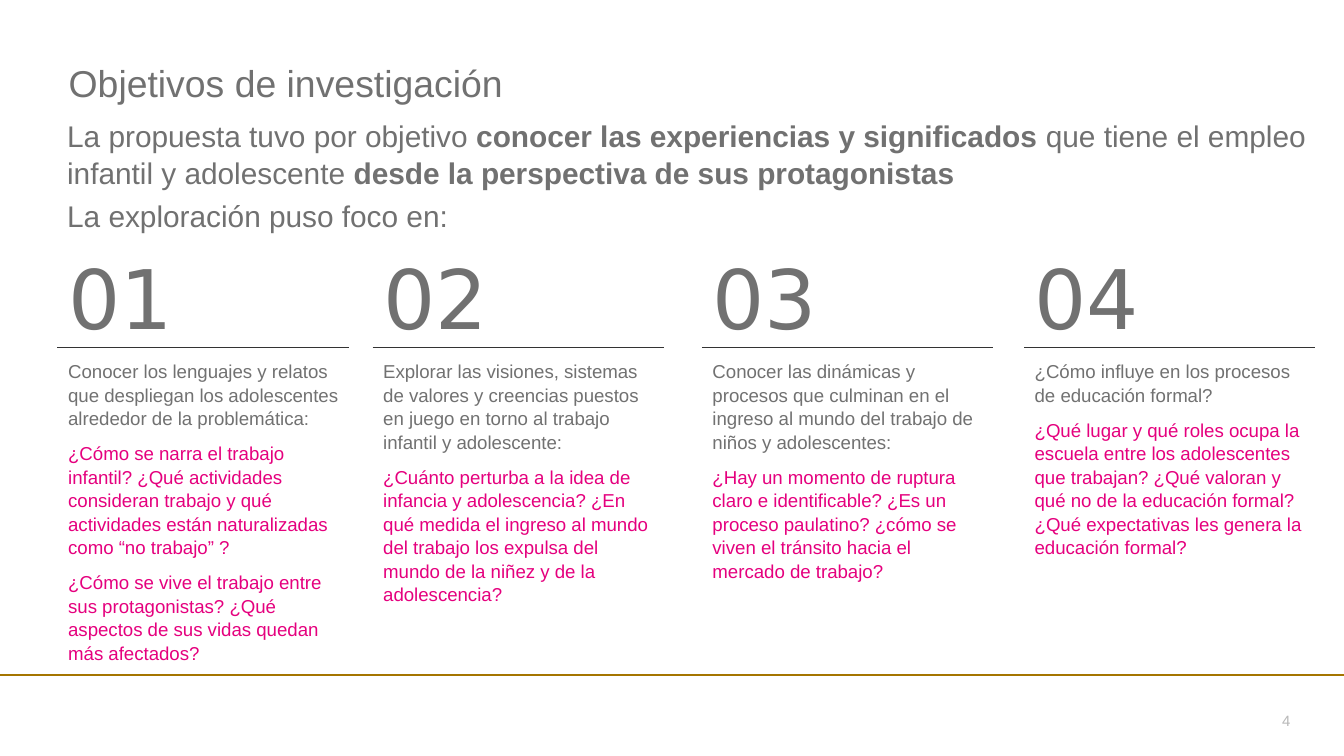
from lxml import etree
from pptx import Presentation
from pptx.dml.color import RGBColor
from pptx.enum.shapes import MSO_CONNECTOR
from pptx.enum.text import MSO_ANCHOR, MSO_AUTO_SIZE, PP_ALIGN
from pptx.oxml.ns import qn
from pptx.util import Pt

STRAIGHT = MSO_CONNECTOR.STRAIGHT
TOP, BOTTOM = MSO_ANCHOR.TOP, MSO_ANCHOR.BOTTOM
NO_FIT = MSO_AUTO_SIZE.NONE
LEFT, RIGHT = PP_ALIGN.LEFT, PP_ALIGN.RIGHT

GREY = RGBColor(0x71, 0x71, 0x71)
PINK = RGBColor(0xE5, 0x00, 0x7E)
DARK = RGBColor(0x33, 0x33, 0x33)
PALE = RGBColor(0xB8, 0xB8, 0xB8)
GOLD = RGBColor(0xA5, 0x75, 0x00)

WIDTH, HEIGHT = 720, 405
COLUMN_WIDTH = 156
RULE_TOP = 186.4

# Left edge, topic and questions of each column
COLUMNS = [
    (30.8,
     "Conocer los lenguajes y relatos que despliegan los adolescentes "
     "alrededor de la problemática:",
     ["¿Cómo se narra el trabajo infantil? ¿Qué actividades consideran trabajo "
      "y qué actividades están naturalizadas como “no trabajo” ?",
      "¿Cómo se vive el trabajo entre sus protagonistas? ¿Qué aspectos de sus "
      "vidas quedan más afectados?"]),
    (199.6,
     "Explorar las visiones, sistemas de valores y creencias puestos en juego "
     "en torno al trabajo infantil y adolescente:",
     ["¿Cuánto perturba a la idea de infancia y adolescencia? ¿En qué medida el "
      "ingreso al mundo del trabajo los expulsa del mundo de la niñez y de la "
      "adolescencia?"]),
    (376,
     "Conocer las dinámicas y procesos que culminan en el ingreso al mundo del "
     "trabajo de niños y adolescentes:",
     ["¿Hay un momento de ruptura claro e identificable? ¿Es un proceso "
      "paulatino? ¿cómo se viven el tránsito hacia el mercado de trabajo?"]),
    (548.6,
     "¿Cómo influye en los procesos de educación formal?",
     ["¿Qué lugar y qué roles ocupa la escuela entre los adolescentes que "
      "trabajan? ¿Qué valoran y qué no de la educación formal? ¿Qué expectativas "
      "les genera la educación formal?"]),
]


class SlideBuilder:
    """Holds the text style and the current slide."""

    font = "Arial"
    line_spacing = 1.05

    def __init__(self, page):
        self.page = page

    def fill_text(self, shape, paragraphs, size, font=None, align=LEFT, anchor=TOP,
                  insets=(0, 0, 0, 0), before=0, after=0):
        """Fill a shape; each paragraph is a list of (text, colour, bold)."""
        frame = shape.text_frame
        frame.word_wrap = True
        frame.auto_size = NO_FIT
        frame.vertical_anchor = anchor
        (frame.margin_left, frame.margin_top,
         frame.margin_right, frame.margin_bottom) = map(Pt, insets)
        for index, spans in enumerate(paragraphs):
            para = frame.add_paragraph() if index else frame.paragraphs[0]
            para.alignment = align
            para.line_spacing = self.line_spacing
            para.space_before = Pt(before if index else 0)
            para.space_after = Pt(after)
            for text, colour, bold in spans:
                span = para.add_run()
                span.text = text
                span.font.name = font or self.font
                span.font.size = Pt(size)
                span.font.bold = bold
                span.font.color.rgb = colour

    def title(self, text, left, top, width, height, size):
        shape = self.page.shapes.title
        shape.left, shape.top = Pt(left), Pt(top)
        shape.width, shape.height = Pt(width), Pt(height)
        self.fill_text(shape, [[(text, GREY, False)]], size)

    def text(self, paragraphs, left, top, width, height, size, **style):
        box = self.page.shapes.add_textbox(Pt(left), Pt(top), Pt(width), Pt(height))
        self.fill_text(box, paragraphs, size, **style)

    def rule(self, left, top, width, colour, weight):
        line = self.page.shapes.add_connector(
            STRAIGHT, Pt(left), Pt(top), Pt(left + width), Pt(top))
        line.line.color.rgb = colour
        line.line.width = Pt(weight)
        etree.SubElement(line._element.spPr, qn("a:effectLst"))


def main():
    deck = Presentation()
    deck.slide_width, deck.slide_height = Pt(WIDTH), Pt(HEIGHT)
    builder = SlideBuilder(deck.slides.add_slide(deck.slide_layouts[5]))

    # Footer rule
    builder.rule(0, 361.6, WIDTH, GOLD, 1.5)

    # Title and introduction
    builder.title("Objetivos de investigación", 36.8, 31, 677.5, 41.8, 20)
    builder.text(
        [[("La propuesta tuvo por objetivo ", GREY, False),
          ("conocer las experiencias y significados ", GREY, True),
          ("que tiene el empleo infantil y adolescente ", GREY, False),
          ("desde la perspectiva de sus protagonistas", GREY, True)],
         [("La exploración puso foco en:", GREY, False)]],
        36, 62, 664, 66, 16, after=3)

    # Numbered columns
    for number, (left, topic, questions) in enumerate(COLUMNS, start=1):
        builder.text([[(f"{number:02}", GREY, False)]],
                     left, RULE_TOP - 59, COLUMN_WIDTH, 59, 44,
                     font="DejaVu Sans", anchor=BOTTOM, insets=(5.7, 2.8, 5.7, 1))
        builder.rule(left, RULE_TOP, COLUMN_WIDTH, DARK, 0.5)
        builder.text([[(topic, GREY, False)]]
                     + [[(question, PINK, False)] for question in questions],
                     left, 192.4, COLUMN_WIDTH, 158, 10,
                     insets=(5.7, 0, 5.7, 0), before=3, after=3)

    # Page number
    builder.text([[("4", PALE, False)]], 640.8, 377.3, 57.6, 11.5, 8,
                 align=RIGHT, insets=(7.2, 3.6, 7.2, 3.6))

    deck.save("out.pptx")


if __name__ == "__main__":
    main()
